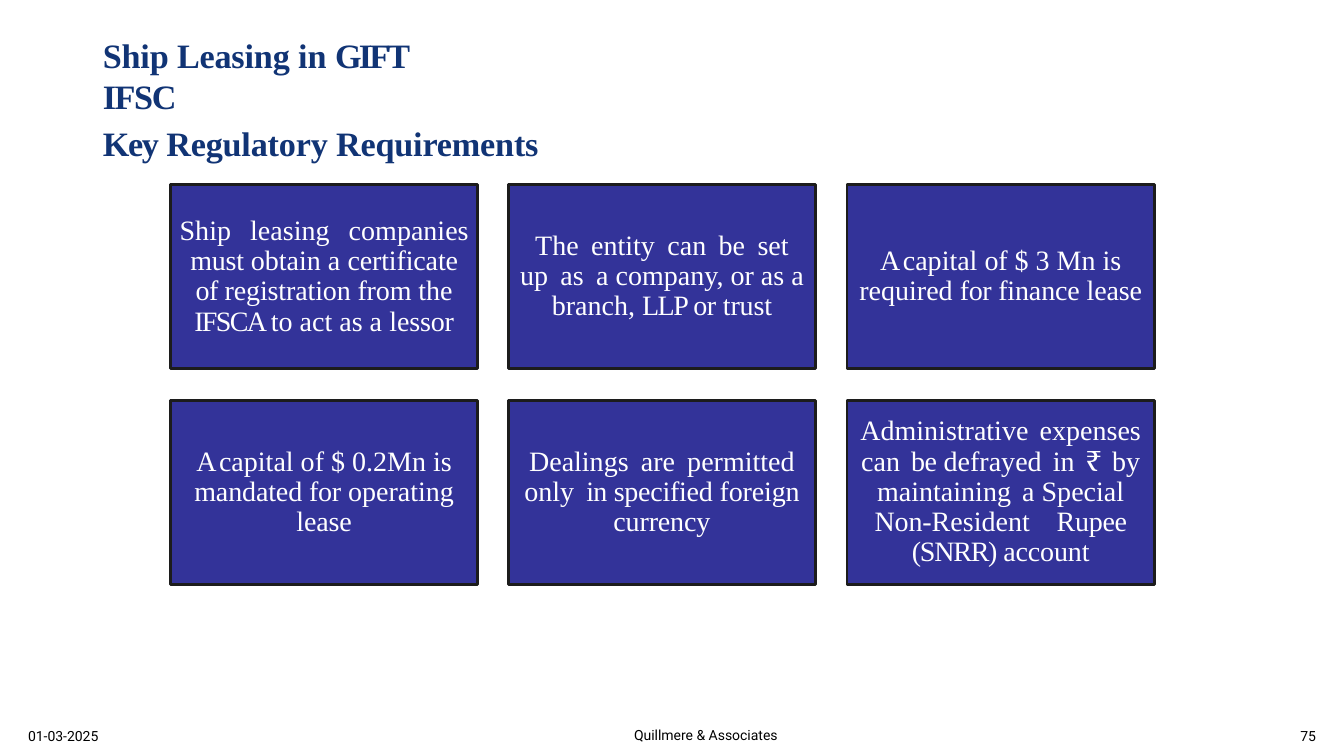
from pptx import Presentation
from pptx.dml.color import RGBColor
from pptx.enum.shapes import MSO_SHAPE
from pptx.enum.text import MSO_ANCHOR, PP_ALIGN
from pptx.util import Pt

PX = 9144  # 100 px to the inch
SLIDE_W, SLIDE_H = 1333, 750

NAVY = RGBColor(0x11, 0x34, 0x75)
INDIGO = RGBColor(0x33, 0x33, 0x99)
CHARCOAL = RGBColor(0x1C, 0x1C, 0x1C)
WHITE = RGBColor(0xFF, 0xFF, 0xFF)
BLACK = RGBColor(0x00, 0x00, 0x00)

SERIF, SANS = "Times New Roman", "Roboto"
LEFT, CENTER, RIGHT = PP_ALIGN.LEFT, PP_ALIGN.CENTER, PP_ALIGN.RIGHT
TOP, MIDDLE, BOTTOM = MSO_ANCHOR.TOP, MSO_ANCHOR.MIDDLE, MSO_ANCHOR.BOTTOM
RECTANGLE = MSO_SHAPE.RECTANGLE

# Each piece is (text, letter spacing in pt, optional extra width of its spaces in pt)
HEADING = [("Ship Leasing ", -0.1), ("in ", 0), ("GIFT ", -2), ("IFSC", -1)]
SUBHEADING = [("Key ", -0.9), ("Regulatory Requirements", -0.1)]
REQUIREMENTS = [
    [("Ship leasing companies ", 0, 8.6), ("must ", -0.2), ("obtain a ", 0),
     ("certificate ", -0.1), ("of ", -0.5), ("registration from ", -0.1),
     ("the ", 0), ("IFSCA ", -1.2), ("to act as a ", 0), ("lessor", -0.1)],
    [("The entity can be set up as ", 0, 3.8), ("a", -0.6),
     (" company, or as a branch, ", 0), ("LLP ", -1.1), ("or ", -0.3),
     ("trust", -0.1)],
    [("A ", -2.1), ("capital ", 0), ("of ", -0.2), ("$ 3 Mn is required ", 0),
     ("for ", -0.3), ("finance lease", -0.1)],
    [("A ", -2.1), ("capital of $ 0.2Mn is ", 0), ("mandated ", -0.1),
     ("for ", -0.2), ("operating ", 0), ("lease", -0.1)],
    [("Dealings are permitted only ", 0, 3.6), ("in ", -0.5),
     ("specified ", -0.2), ("foreign currency", -0.1)],
    [("Administrative expenses can ", 0, 2.8), ("be ", -0.3),
     ("defrayed in ₹ by maintaining ", 0, 2.8), ("a", -0.6), (" Special ", 0),
     ("Non-", -0.1), ("Resident ", 0, 14), ("Rupee ", -0.2),
     ("(SNRR) ", -0.9), ("account", -0.1)],
]


def px(*lengths):
    return [length * PX for length in lengths]


def set_frame(frame, anchor, side, top, bottom):
    frame.word_wrap = True
    frame.vertical_anchor = anchor
    frame.margin_left = frame.margin_right = side * PX
    frame.margin_top, frame.margin_bottom = px(top, bottom)


def add_run(paragraph, text, spacing, font_name, size, color, bold):
    run = paragraph.add_run()
    run.text = text
    run.font.name = font_name
    run.font.size = Pt(size)
    run.font.bold = bold
    run.font.color.rgb = color
    if spacing:
        run._r.get_or_add_rPr().set("spc", str(round(spacing * 100)))


def write_pieces(paragraph, pieces, font_name, size, color, bold=False):
    style = (font_name, size, color, bold)
    for text, spacing, *widening in pieces:
        if not widening:
            add_run(paragraph, text, spacing, *style)
            continue
        for word in text.split():
            add_run(paragraph, word, spacing, *style)
            add_run(paragraph, " ", widening[0], *style)


def add_title(slide, box, pieces):
    title = slide.shapes.add_textbox(*px(*box))
    set_frame(title.text_frame, TOP, 0, 4, 0)
    paragraph = title.text_frame.paragraphs[0]
    paragraph._p.get_or_add_pPr().set("marL", str(2 * PX))
    write_pieces(paragraph, pieces, SERIF, 24.4, NAVY, bold=True)


def add_requirement(slide, box, pieces):
    card = slide.shapes.add_shape(RECTANGLE, *px(*box))
    card.shadow.inherit = False
    card.fill.solid()
    card.fill.fore_color.rgb = INDIGO
    card.line.color.rgb = CHARCOAL
    card.line.width = Pt(2)
    set_frame(card.text_frame, MIDDLE, 8, 8, 8)
    paragraph = card.text_frame.paragraphs[0]
    paragraph.alignment = CENTER
    paragraph.line_spacing = 0.9
    write_pieces(paragraph, pieces, SERIF, 20, WHITE)


def add_requirement_grid(slide, box):
    left, top, width, height = box
    columns, card_w, card_h = 3, 305, 183
    for i, pieces in enumerate(REQUIREMENTS):
        row, column = divmod(i, columns)
        x = left + column * (width - card_w) // (columns - 1)
        y = top + row * (height - card_h)
        add_requirement(slide, (x, y, card_w, card_h), pieces)


def add_footer(slide, box):
    left, top, width, height = box
    parts = [
        ("01-03-2025", left, top, 97, LEFT),
        ("Quillmere & Associates", left + 471, top - 1, 422, CENTER),
        ("75", left + width - 48, top, 48, RIGHT),
    ]
    for text, x, y, part_w, alignment in parts:
        label = slide.shapes.add_textbox(*px(x, y, part_w, height))
        set_frame(label.text_frame, BOTTOM, 10, 5, 5)
        paragraph = label.text_frame.paragraphs[0]
        paragraph.alignment = alignment
        write_pieces(paragraph, [(text, 0)], SANS, 10, BLACK)


def main():
    deck = Presentation()
    deck.slide_width, deck.slide_height = px(SLIDE_W, SLIDE_H)
    slide = deck.slides.add_slide(deck.slide_layouts[6])

    # Headings
    add_title(slide, (100, 30, 381, 44), HEADING)
    add_title(slide, (100, 117, 442, 44), SUBHEADING)

    # Six requirements, then the footer
    add_requirement_grid(slide, (169, 183, 976, 397))
    add_footer(slide, (18, 693, 1297, 50))

    deck.save("out.pptx")


if __name__ == "__main__":
    main()
